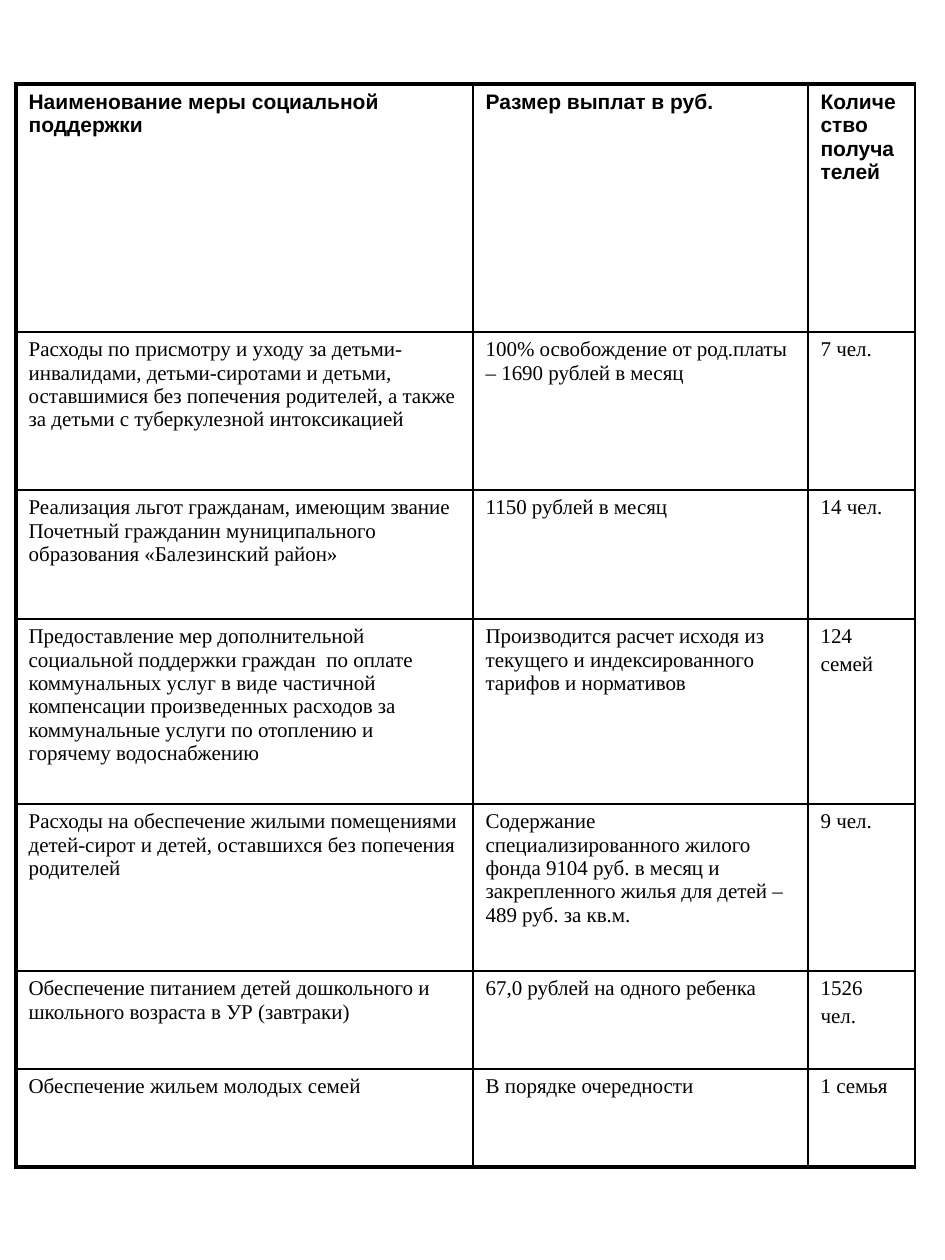
"""Build a slide with a table of social support measures."""
import pptx
import pptx.dml.color
import pptx.oxml
import pptx.oxml.ns
import pptx.util

BLACK = pptx.dml.color.RGBColor(0, 0, 0)
EMU_PER_PX = 914400 // 126
THIN, THICK = 1, 2.25
COLUMN_WIDTHS = [457, 335, 107]
ROW_HEIGHTS = [248, 158, 129, 185, 167, 98, 98]
ROWS = [
    ("Наименование меры социальной поддержки",
     "Размер выплат в руб.",
     "Количество получателей"),
    ("Расходы по присмотру и уходу за детьми-инвалидами, детьми-сиротами и детьми, "
     "оставшимися без попечения родителей, а также за детьми с туберкулезной интоксикацией",
     "100% освобождение от род.платы – 1690 рублей в месяц",
     "7 чел."),
    ("Реализация льгот гражданам, имеющим звание Почетный гражданин "
     "муниципального образования «Балезинский район»",
     "1150 рублей в месяц",
     "14 чел."),
    ("Предоставление мер дополнительной социальной поддержки граждан  по оплате "
     "коммунальных услуг в виде частичной компенсации произведенных расходов "
     "за коммунальные услуги по отоплению и горячему водоснабжению",
     "Производится расчет исходя из текущего и индексированного тарифов и нормативов",
     "124\nсемей"),
    ("Расходы на обеспечение жилыми помещениями детей-сирот и детей, "
     "оставшихся без попечения родителей",
     "Содержание специализированного жилого фонда 9104 руб. в месяц "
     "и закрепленного жилья для детей – 489 руб. за кв.м.",
     "9 чел."),
    ("Обеспечение питанием детей дошкольного и школьного возраста в УР (завтраки)",
     "67,0 рублей на одного ребенка",
     "1526\nчел."),
    ("Обеспечение жильем молодых семей",
     "В порядке очередности",
     "1 семья"),
]


def px(length):
    return pptx.util.Emu(length * EMU_PER_PX)


def set_borders(cell, widths):
    properties = cell._tc.get_or_add_tcPr()
    for side, width in widths.items():
        properties.append(pptx.oxml.parse_xml(
            f'<a:ln{side} {pptx.oxml.ns.nsdecls("a")} w="{pptx.util.Pt(width)}">'
            f'<a:solidFill><a:srgbClr val="{BLACK}"/></a:solidFill></a:ln{side}>'))


def write_cell(cell, text, is_header):
    frame = cell.text_frame
    for index, line in enumerate(text.split("\n")):
        paragraph = frame.add_paragraph() if index else frame.paragraphs[0]
        paragraph.space_before = pptx.util.Pt(2.6)
        run = paragraph.add_run()
        run.text = line
        run.font.name = "Arial" if is_header else "Times New Roman"
        run.font.size = pptx.util.Pt(12)
        run.font.bold = is_header
        run.font.color.rgb = BLACK


def add_measures_table(slide):
    table = slide.shapes.add_table(
        len(ROWS), len(COLUMN_WIDTHS), px(16), px(84),
        px(sum(COLUMN_WIDTHS)), px(sum(ROW_HEIGHTS))).table
    table.first_row = table.horz_banding = False
    for column, width in zip(table.columns, COLUMN_WIDTHS):
        column.width = px(width)
    for row, height in zip(table.rows, ROW_HEIGHTS):
        row.height = px(height)
    last_row = len(ROWS) - 1
    for row_index, texts in enumerate(ROWS):
        for column_index, text in enumerate(texts):
            cell = table.cell(row_index, column_index)
            write_cell(cell, text, row_index == 0)
            set_borders(cell, {
                "L": THICK if column_index == 0 else THIN,
                "R": THIN,
                "T": THICK if row_index == 0 else THIN,
                "B": THICK if row_index == last_row else THIN,
            })
            cell.fill.background()


def main():
    presentation = pptx.Presentation()
    presentation.slide_width = px(945)
    presentation.slide_height = px(1260)
    slide = presentation.slides.add_slide(presentation.slide_layouts[6])
    add_measures_table(slide)
    presentation.save("out.pptx")


if __name__ == "__main__":
    main()
